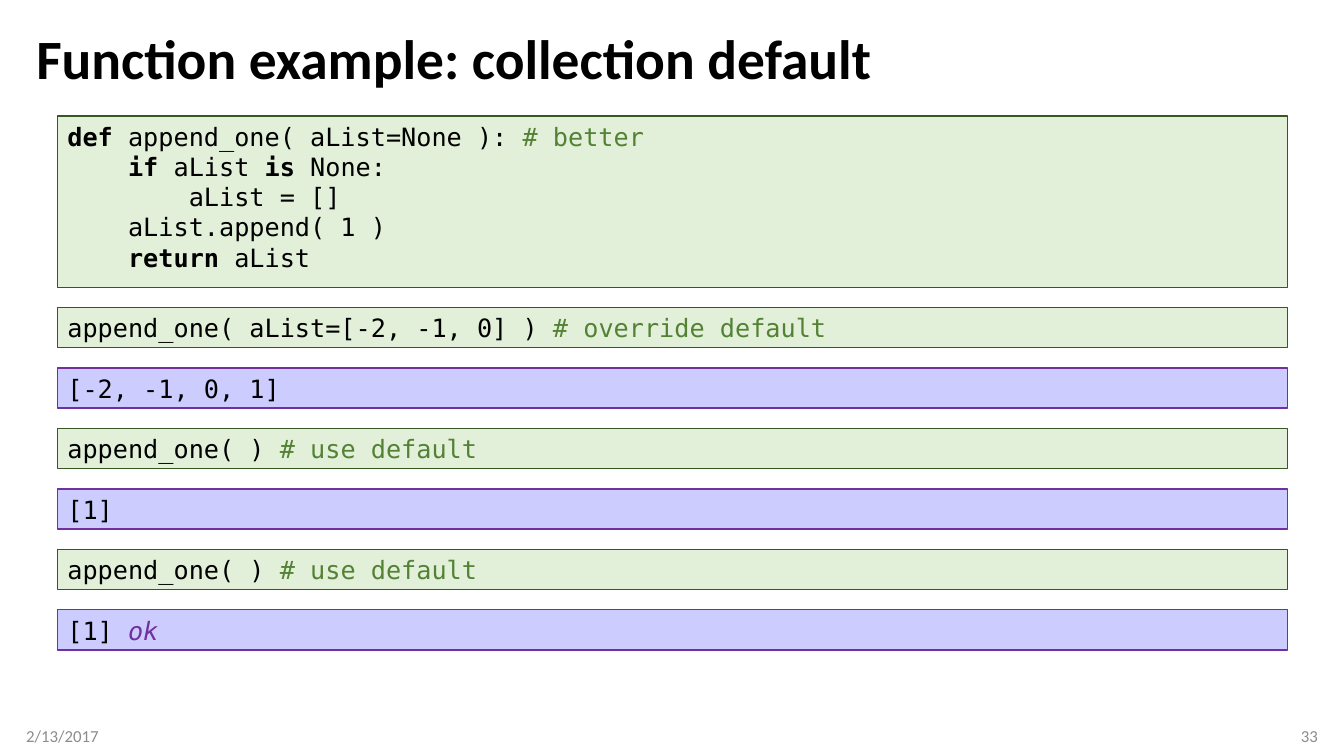
from pptx import Presentation
from pptx import util as u
from pptx.dml import color
from pptx.enum import shapes, text

TITLE = "Function example: collection default"
DATE, NUMBER = "2/13/2017", "33"

STYLES = {
    "plain": {"hue": "000000"},
    "keyword": {"hue": "000000", "bold": True},
    "comment": {"hue": "548235"},
    "remark": {"hue": "7030A0", "italic": True},
}
PANELS = {"code": ("E2F0D9", "385723"), "output": ("CCCCFF", "7030A0")}

DEFAULT_CALL = [[("append_one( ) ", "plain"), ("# use default", "comment")]]
CELLS = [
    ("code", [
        [("def ", "keyword"), ("append_one( aList=None ): ", "plain"), ("# better", "comment")],
        [("    ", "plain"), ("if ", "keyword"), ("aList ", "plain"), ("is", "keyword"),
         (" None:", "plain")],
        [("        aList = []", "plain")],
        [("    aList.append( 1 )", "plain")],
        [("    return ", "keyword"), ("aList", "plain")],
    ]),
    ("code", [[("append_one( aList=[-2, -1, 0] ) ", "plain"), ("# override default", "comment")]]),
    ("output", [[("[-2, -1, 0, 1]", "plain")]]),
    ("code", DEFAULT_CALL),
    ("output", [[("[1]", "plain")]]),
    ("code", DEFAULT_CALL),
    ("output", [[("[1] ", "plain"), ("ok", "remark")]]),
]

LEFT, TOP, WIDTH, GAP = 0.57, 1.15, 12.2, 0.2
BLOCK_HEIGHT, LINE_HEIGHT = 1.7, 0.4
MARGIN, SLIDE_WIDTH, FOOTER_WIDTH = 0.26, 13.33, 3


def rgb(value):
    return color.RGBColor.from_string(value)


def add_span(para, words, face, size, hue, bold=False, italic=False):
    span = para.add_run()
    span.text = words
    span.font.name = face
    span.font.size = u.Pt(size)
    span.font.color.rgb = rgb(hue)
    span.font.bold = bold
    span.font.italic = italic


def add_title(page):
    title = page.shapes.title
    title.left, title.top = u.Inches(MARGIN), u.Inches(0.25)
    title.width, title.height = u.Inches(SLIDE_WIDTH - 2 * MARGIN), u.Inches(0.72)
    frame = title.text_frame
    frame.vertical_anchor = text.MSO_ANCHOR.MIDDLE
    frame.auto_size = text.MSO_AUTO_SIZE.NONE
    para = frame.paragraphs[0]
    para.alignment = text.PP_ALIGN.LEFT
    para.line_spacing = 0.9
    add_span(para, TITLE, "Calibri", 39.6, "000000", bold=True)


def add_footer(page, words, left, align):
    box = page.shapes.add_textbox(
        u.Inches(left), u.Inches(7.1), u.Inches(FOOTER_WIDTH), u.Inches(0.4))
    frame = box.text_frame
    frame.word_wrap = True
    frame.vertical_anchor = text.MSO_ANCHOR.MIDDLE
    if align == text.PP_ALIGN.LEFT:
        frame.margin_left = 0
    else:
        frame.margin_right = 0
    para = frame.paragraphs[0]
    para.alignment = align
    add_span(para, words, "Calibri", 12, "8C8C8C")


def add_cell(page, kind, lines, top, height):
    fill, edge = PANELS[kind]
    box = page.shapes.add_shape(
        shapes.MSO_SHAPE.RECTANGLE,
        u.Inches(LEFT), u.Inches(top), u.Inches(WIDTH), u.Inches(height))
    box.shadow.inherit = False
    box.fill.solid()
    box.fill.fore_color.rgb = rgb(fill)
    box.line.color.rgb = rgb(edge)
    box.line.width = u.Pt(1)
    frame = box.text_frame
    frame.word_wrap = True
    frame.vertical_anchor = text.MSO_ANCHOR.TOP if len(lines) > 1 else text.MSO_ANCHOR.MIDDLE
    for index, line in enumerate(lines):
        para = frame.add_paragraph() if index else frame.paragraphs[0]
        para.alignment = text.PP_ALIGN.LEFT
        for words, style in line:
            add_span(para, words, "DejaVu Sans Mono", 18, **STYLES[style])


def main():
    deck = Presentation()
    deck.slide_width, deck.slide_height = u.Inches(SLIDE_WIDTH), u.Inches(7.5)
    page = deck.slides.add_slide(deck.slide_layouts[5])
    add_title(page)
    add_footer(page, DATE, MARGIN, text.PP_ALIGN.LEFT)
    add_footer(page, NUMBER, SLIDE_WIDTH - MARGIN - FOOTER_WIDTH, text.PP_ALIGN.RIGHT)
    top = TOP
    for kind, lines in CELLS:
        height = BLOCK_HEIGHT if len(lines) > 1 else LINE_HEIGHT
        add_cell(page, kind, lines, top, height)
        top += height + GAP
    deck.save("out.pptx")


if __name__ == "__main__":
    main()
